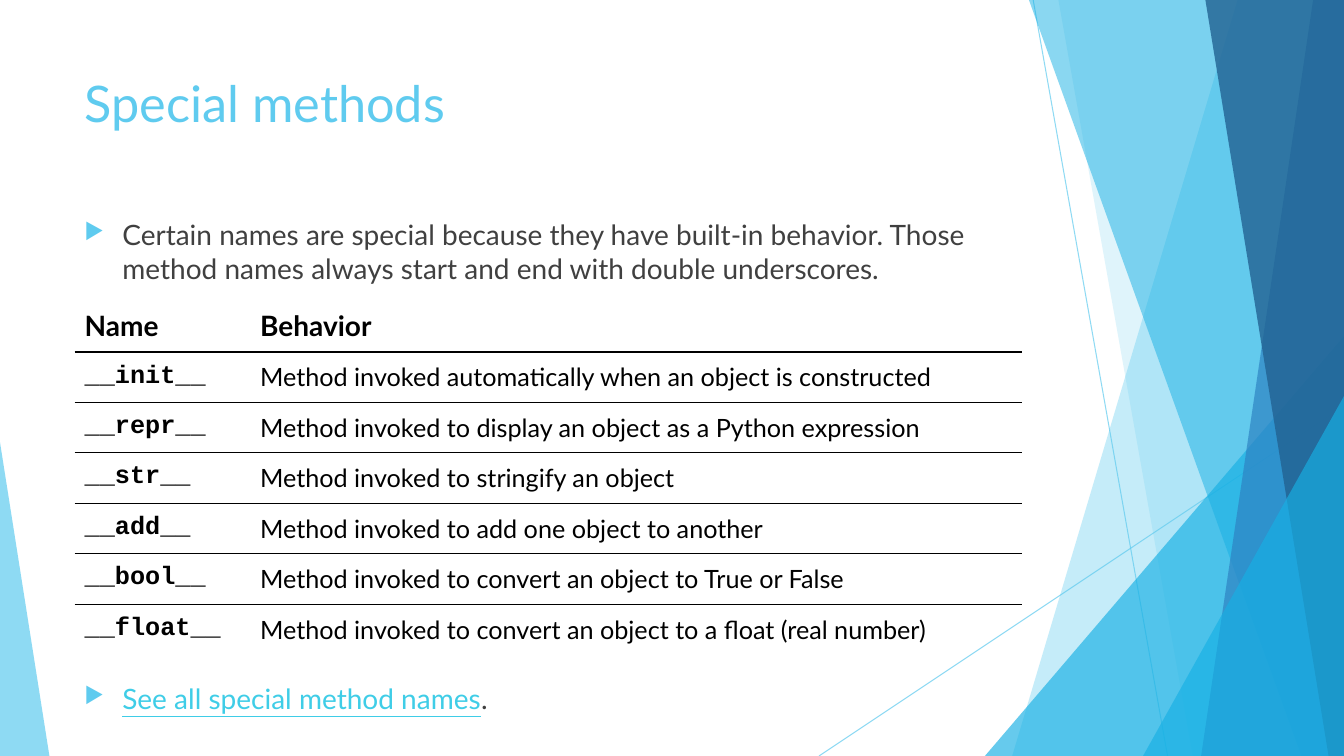
"""Builds the slide on Python special methods and saves it as out.pptx."""
from dataclasses import dataclass

from lxml import etree
from pptx import Presentation
from pptx.dml.color import RGBColor
from pptx.enum.shapes import MSO_CONNECTOR, MSO_SHAPE
from pptx.enum.text import MSO_ANCHOR, MSO_AUTO_SIZE, PP_ALIGN
from pptx.oxml.ns import qn
from pptx.util import Pt

STRAIGHT = MSO_CONNECTOR.STRAIGHT
TRIANGLE = MSO_SHAPE.ISOSCELES_TRIANGLE
TOP = MSO_ANCHOR.TOP
LEFT = PP_ALIGN.LEFT
FIXED_SIZE = MSO_AUTO_SIZE.NONE


@dataclass(frozen=True)
class Theme:
    sky: str = "5FCBEF"
    azure: str = "17B0E4"
    blue: str = "2E83C3"
    navy: str = "226292"
    link: str = "3FCDE7"
    body: str = "404040"
    black: str = "000000"
    text_font: str = "Lato"
    code_font: str = "Courier New"
    title_size: int = 36
    body_size: int = 20
    row_size: int = 18


THEME = Theme()
WIDTH, HEIGHT = 960, 540
MARGIN, CONTENT_WIDTH = 53.3, 676.8


def paint(fill, element, color, opacity):
    """Fill solidly with a colour at an opacity in percent."""
    fill.solid()
    fill.fore_color.rgb = RGBColor.from_string(color)
    rgb = element.xpath(".//a:srgbClr")[0]
    etree.SubElement(rgb, qn("a:alpha"), val=str(opacity * 1000))


def style(run, size, color, font=THEME.text_font, bold=False):
    """Set the type of a run."""
    run.font.name = font
    run.font.size = Pt(size)
    run.font.bold = bold
    run.font.color.rgb = RGBColor.from_string(color)


deck = Presentation()
deck.slide_width, deck.slide_height = Pt(WIDTH), Pt(HEIGHT)
slide = deck.slides.add_slide(deck.slide_layouts[5])
shapes = slide.shapes

for x1, y1, x2, y2 in [(738, 0, 834, HEIGHT), (WIDTH, 290, 585, HEIGHT)]:
    ray = shapes.add_connector(STRAIGHT, Pt(x1), Pt(y1), Pt(x2), Pt(y2))
    ray.line.width = Pt(0.75)
    paint(ray.line.fill, ray._element.spPr, THEME.sky, 70)
    etree.SubElement(ray._element.spPr, qn("a:effectLst"))

facets = [
    ("band", 884, 723, THEME.sky, 36),
    ("band", 756, 852, THEME.sky, 20),
    ("corner", (703.5, 240, 256.5, 300), 1, THEME.azure, 66),
    ("band", 735, 929.5, THEME.azure, 50),
    ("band", 938, 858, THEME.blue, 70),
    ("band", 861, 949, THEME.navy, 80),
    ("corner", (816.5, 283, 143.5, 257), 1, THEME.azure, 66),
    ("corner", (0, 316, 35.3, 224), 0, THEME.sky, 70),
]
for kind, place, end, color, opacity in facets:
    if kind == "band":
        outline = shapes.build_freeform(Pt(place), 0)
        outline.add_line_segments(
            [(Pt(WIDTH), 0), (Pt(WIDTH), Pt(HEIGHT)), (Pt(end), Pt(HEIGHT))])
        facet = outline.convert_to_shape()
    else:
        facet = shapes.add_shape(TRIANGLE, *map(Pt, place))
        facet.adjustments[0] = end
    facet.shadow.inherit = False
    facet.line.fill.background()
    paint(facet.fill, facet._element.spPr, color, opacity)

title = shapes.title
title.left, title.top = Pt(MARGIN), Pt(48)
title.width, title.height = Pt(CONTENT_WIDTH), Pt(104)
title.text_frame.text = "Special methods"
title.text_frame.vertical_anchor = TOP
title.text_frame.auto_size = FIXED_SIZE
heading = title.text_frame.paragraphs[0]
heading.alignment = LEFT
style(heading.runs[0], THEME.title_size, THEME.sky)

points = [
    (152, 58, [("Certain names are special because they have built-in behavior. "
                "Those method names always start and end with double underscores.",
                THEME.body, False)]),
    (483, 34, [("See all special method names", THEME.link, True),
               (".", THEME.body, False)]),
]
for top, height, pieces in points:
    point = shapes.add_textbox(Pt(MARGIN), Pt(top), Pt(CONTENT_WIDTH), Pt(height))
    point.text_frame.word_wrap = True
    paragraph = point.text_frame.paragraphs[0]
    for text, color, underlined in pieces:
        run = paragraph.add_run()
        run.text = text
        style(run, THEME.body_size, color)
        run.font.underline = underlined
    properties = paragraph._p.get_or_add_pPr()
    properties.set("marL", str(Pt(27)))
    properties.set("indent", str(Pt(-27)))
    bullet_color = etree.SubElement(properties, qn("a:buClr"))
    etree.SubElement(bullet_color, qn("a:srgbClr"), val=THEME.sky)
    etree.SubElement(properties, qn("a:buSzPct"), val="80000")
    etree.SubElement(properties, qn("a:buChar"), char="▶")

methods = [
    ("Name", "Behavior"),
    ("__init__", "Method invoked automatically when an object is constructed"),
    ("__repr__", "Method invoked to display an object as a Python expression"),
    ("__str__", "Method invoked to stringify an object"),
    ("__add__", "Method invoked to add one object to another"),
    ("__bool__", "Method invoked to convert an object to True or False"),
    ("__float__", "Method invoked to convert an object to a float (real number)"),
]
last = len(methods) - 1
table = shapes.add_table(len(methods), 2, Pt(MARGIN), Pt(213),
                         Pt(CONTENT_WIDTH), Pt(254.4)).table
table.first_row = table.horz_banding = False
table.columns[0].width, table.columns[1].width = Pt(125.3), Pt(551.5)
for r, texts in enumerate(methods):
    header = r == 0
    table.rows[r].height = Pt(38.4 if header else 36)
    for c, text in enumerate(texts):
        cell = table.cell(r, c)
        cell.text_frame.text = text
        cell.margin_left = cell.margin_right = Pt(7.2)
        cell.margin_top = cell.margin_bottom = Pt(7.2)
        is_code = c == 0 and not header
        style(cell.text_frame.paragraphs[0].runs[0],
              THEME.body_size if header else THEME.row_size, THEME.black,
              THEME.code_font if is_code else THEME.text_font, header or is_code)
        cell.fill.background()
        borders = {"lnL": False, "lnR": False, "lnT": r > 0, "lnB": r < last}
        for position, (side, visible) in enumerate(borders.items()):
            border = etree.Element(qn(f"a:{side}"), w=str(Pt(1)))
            if visible:
                ink = etree.SubElement(border, qn("a:solidFill"))
                etree.SubElement(ink, qn("a:srgbClr"), val=THEME.black)
            else:
                etree.SubElement(border, qn("a:noFill"))
            cell._tc.get_or_add_tcPr().insert(position, border)

deck.save("out.pptx")
